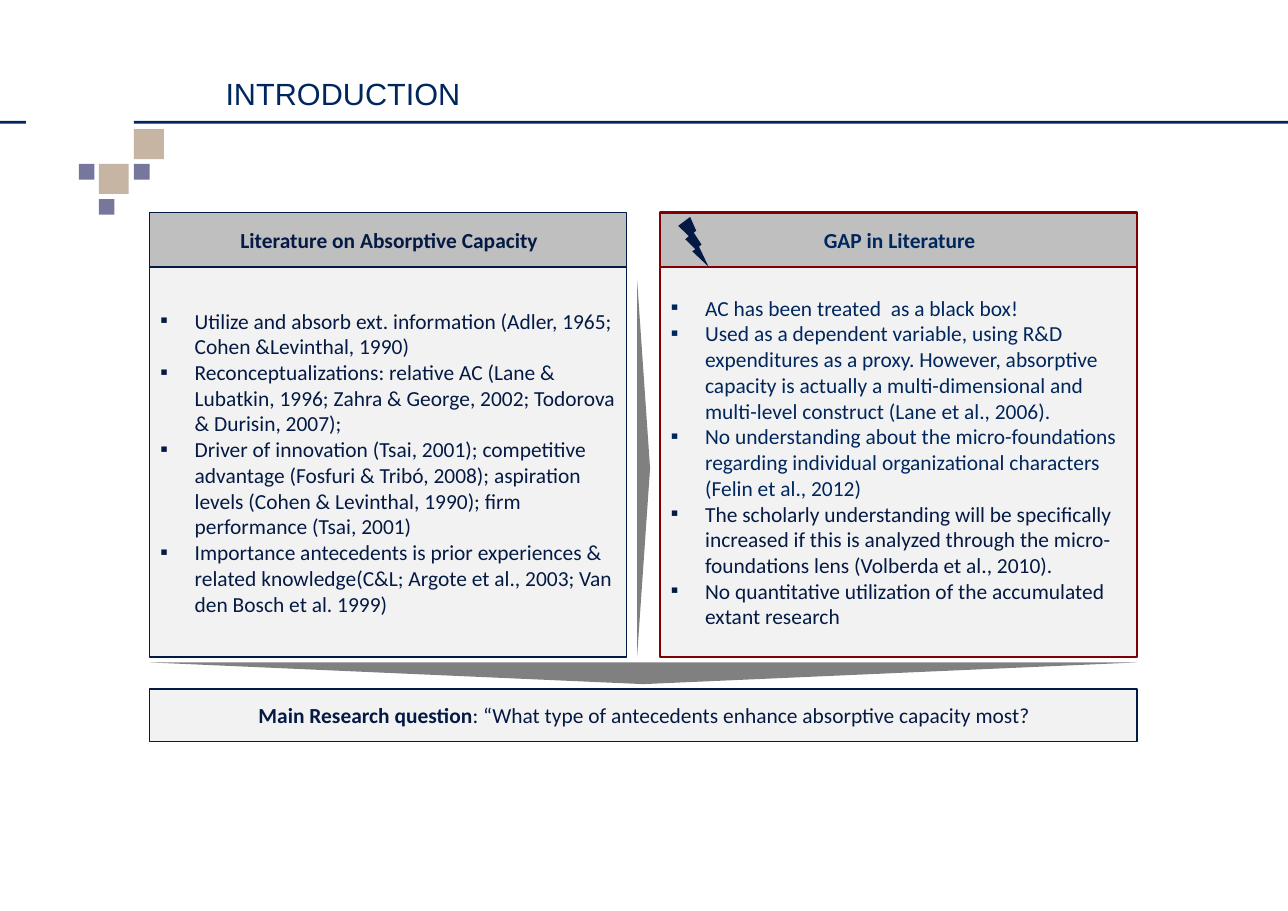
from dataclasses import dataclass

from lxml import etree
from pptx import Presentation
from pptx.dml.color import RGBColor
from pptx.enum import shapes, text
from pptx.oxml import ns
from pptx.util import Cm, Pt


@dataclass(frozen=True)
class Theme:
    navy: str = "00275D"
    ink: str = "041A44"
    red: str = "800000"
    panel: str = "F2F2F2"
    header: str = "BFBFBF"
    arrow: str = "808080"
    violet: str = "77769D"
    sand: str = "C5B5A2"
    title_font: str = "Arial"
    body_font: str = "Calibri"
    title_size: float = 20
    body_size: float = 14


THEME = Theme()
SHAPE = shapes.MSO_SHAPE
ALIGN = text.PP_ALIGN

LITERATURE = [
    "Utilize and absorb ext. information (Adler, 1965; Cohen &Levinthal, 1990)",
    "Reconceptualizations: relative AC (Lane & Lubatkin, 1996; Zahra & George, 2002; "
    "Todorova & Durisin, 2007);",
    "Driver of innovation (Tsai, 2001); competitive advantage (Fosfuri & Tribó, 2008); "
    "aspiration levels (Cohen & Levinthal, 1990); firm performance (Tsai, 2001)",
    "Importance antecedents is prior experiences & related knowledge(C&L; "
    "Argote et al., 2003; Van den Bosch et al. 1999)",
]
KNOWN_GAPS = [
    "AC has been treated  as a black box!",
    "Used as a dependent variable, using R&D expenditures as a proxy. However, absorptive "
    "capacity is actually a multi-dimensional and multi-level construct (Lane et al., 2006).",
    "No understanding about the micro-foundations regarding individual organizational "
    "characters (Felin et al., 2012)",
]
OPEN_NEEDS = [
    "The scholarly understanding will be specifically increased if this is analyzed "
    "through the micro-foundations lens (Volberda et al., 2010).",
    "No quantitative utilization of the accumulated extant research",
]


def write(paragraph, wording, color=THEME.ink, bold=False, size=THEME.body_size,
          font=THEME.body_font, align=ALIGN.LEFT):
    paragraph.alignment = align
    run = paragraph.add_run()
    run.text = wording
    run.font.name, run.font.size, run.font.bold = font, Pt(size), bold
    run.font.color.rgb = RGBColor.from_string(color)


def add_bullet(paragraph):
    properties = paragraph._p.get_or_add_pPr()
    properties.set("marL", str(Cm(0.79)))
    properties.set("indent", str(-Cm(0.79)))
    etree.SubElement(properties, ns.qn("a:buFont")).set("typeface", THEME.body_font)
    etree.SubElement(properties, ns.qn("a:buChar")).set("char", "▪")


def draw(slide, kind, left, top, width, height, fill, line=None, weight=1):
    part = slide.shapes.add_shape(kind, Cm(left), Cm(top), Cm(width), Cm(height))
    part.shadow.inherit = False
    part.fill.solid()
    part.fill.fore_color.rgb = RGBColor.from_string(fill)
    if line:
        part.line.color.rgb = RGBColor.from_string(line)
        part.line.width = Pt(weight)
    else:
        part.line.fill.background()
    frame = part.text_frame
    frame.word_wrap = True
    frame.vertical_anchor = text.MSO_ANCHOR.MIDDLE
    frame.margin_right = Cm(0.2)
    return part


def add_title(slide, left, top, width, height):
    title = slide.shapes.title
    title.left, title.top, title.width, title.height = map(Cm, (left, top, width, height))
    frame = title.text_frame
    frame.auto_size = text.MSO_AUTO_SIZE.NONE
    frame.margin_left = frame.margin_right = frame.margin_top = frame.margin_bottom = 0
    frame.vertical_anchor = text.MSO_ANCHOR.BOTTOM
    write(frame.paragraphs[0], "INTRODUCTION", color=THEME.navy,
          size=THEME.title_size, font=THEME.title_font)


def add_ornament(slide, left, top, page_width):
    columns, rows = (0, 0.46, 1.27), (0, 0.8, 1.61)
    small, large = (0.36, THEME.violet), (0.69, THEME.sand)
    for column, row, (side, fill) in [(0, 1, small), (2, 0, large), (1, 1, large),
                                      (1, 2, small), (2, 1, small)]:
        draw(slide, SHAPE.RECTANGLE, left + columns[column], top + rows[row],
             side, side, fill)
    rule_start = left + columns[2]
    for start, end in [(0, 0.6), (rule_start, page_width)]:
        draw(slide, SHAPE.RECTANGLE, start, top - 0.19, end - start, 0.06, THEME.navy)


def add_column(slide, left, top, width, height, heading, heading_color, points,
               border, weight):
    header_height = 1.25
    body = draw(slide, SHAPE.RECTANGLE, left, top + header_height, width,
                height - header_height, THEME.panel, border, weight)
    frame = body.text_frame
    for index, (wording, color) in enumerate(points):
        paragraph = frame.add_paragraph() if index else frame.paragraphs[0]
        add_bullet(paragraph)
        write(paragraph, wording, color=color)
    header = draw(slide, SHAPE.RECTANGLE, left, top, width, header_height,
                  THEME.header, border, weight)
    write(header.text_frame.paragraphs[0], heading, color=heading_color, bold=True,
          align=ALIGN.CENTER)


def add_arrow(slide, left, top, width, height, rotation):
    base, depth = (height, width) if rotation == 90 else (width, height)
    arrow = draw(slide, SHAPE.ISOSCELES_TRIANGLE, left + (width - base) / 2,
                 top + (height - depth) / 2, base, depth, THEME.arrow)
    arrow.rotation = rotation


def add_question(slide, left, top, width, height):
    box = draw(slide, SHAPE.RECTANGLE, left, top, width, height, THEME.panel, THEME.ink)
    paragraph = box.text_frame.paragraphs[0]
    write(paragraph, "Main Research question", bold=True, align=ALIGN.CENTER)
    write(paragraph, ": “What type of antecedents enhance absorptive capacity most?",
          align=ALIGN.CENTER)


def build_slide(slide, page_width):
    left, top, width, height = 3.45, 4.9, 22.77, 10.25
    column_width = 11
    gap_left = left + width - column_width
    add_ornament(slide, 1.82, 2.98, page_width)
    add_title(slide, 5.2, 0.79, 23.14, 1.78)
    add_arrow(slide, left, top + height + 0.12, width, 0.5, 180)
    add_question(slide, left, top + height + 0.73, width, 1.22)
    add_column(slide, gap_left, top, column_width, height, "GAP in Literature",
               THEME.navy,
               [(point, THEME.navy) for point in KNOWN_GAPS]
               + [(point, THEME.ink) for point in OPEN_NEEDS], THEME.red, 1.5)
    draw(slide, SHAPE.LIGHTNING_BOLT, gap_left + 0.42, top + 0.1, 0.7, 1.15, THEME.ink)
    add_column(slide, left, top, column_width, height,
               "Literature on Absorptive Capacity", THEME.ink,
               [(point, THEME.ink) for point in LITERATURE], THEME.ink, 1)
    add_arrow(slide, left + column_width + 0.24, top + 1.54, 0.3, height - 1.54, 90)


def main():
    page_width = 29.7
    deck = Presentation()
    deck.slide_width, deck.slide_height = Cm(page_width), Cm(21)
    build_slide(deck.slides.add_slide(deck.slide_layouts[5]), page_width)
    deck.save("out.pptx")


if __name__ == "__main__":
    main()
